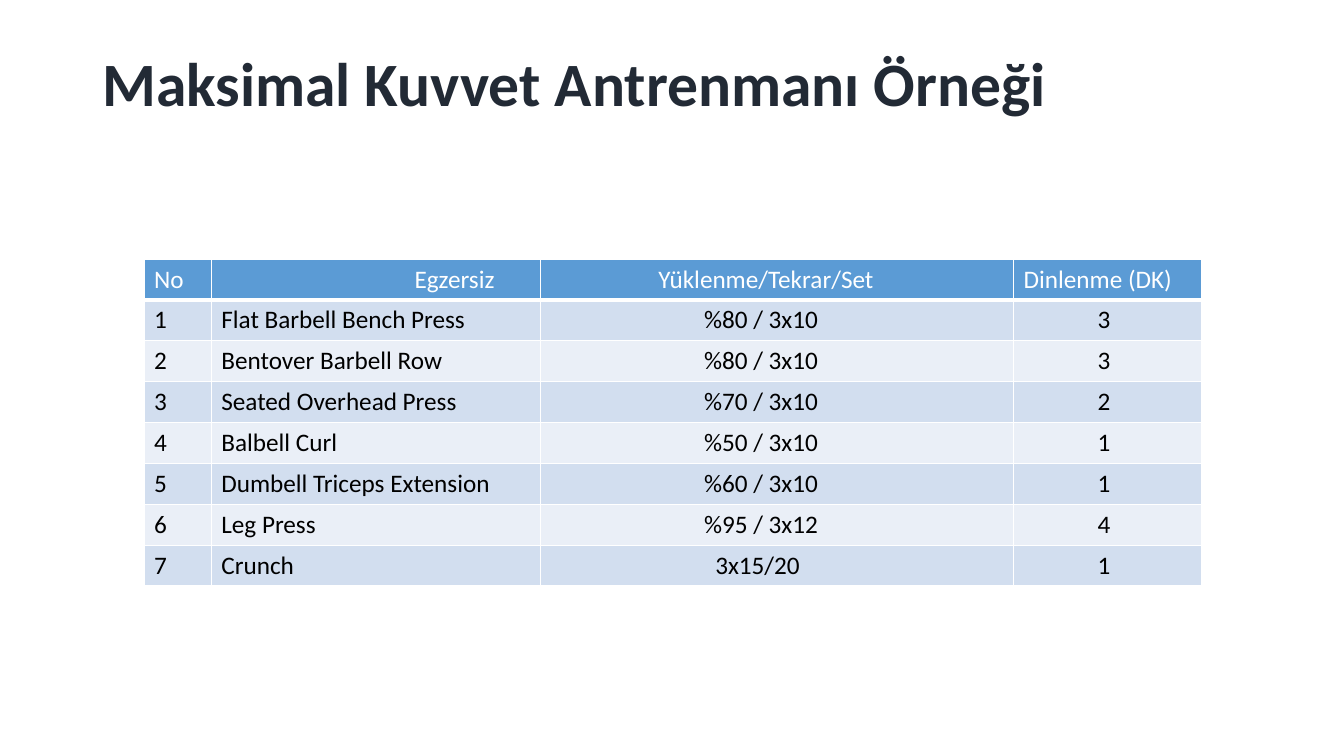
from dataclasses import dataclass

from lxml import etree
from pptx import Presentation, util as u
from pptx.dml import color
from pptx.enum import text
from pptx.oxml import ns


@dataclass(frozen=True)
class Theme:
    """Colours, font and type sizes of the slide."""
    font: str = "Calibri"
    title_size: int = 44
    table_size: int = 18
    title: str = "222A35"
    header: str = "5B9BD5"
    bands: tuple = ("D2DEEF", "EAEFF7")
    white: str = "FFFFFF"
    body: str = "000000"


def apply_format(target, values):
    """Set every attribute named in values on target."""
    for name, value in values.items():
        setattr(target, name, value)


class SlideBuilder:
    """Places styled elements on a grid of 160 columns by 90 rows."""

    def __init__(self, presentation, theme):
        """Add a blank slide and measure its grid."""
        self.theme = theme
        self.slide = presentation.slides.add_slide(presentation.slide_layouts[6])
        self.column = presentation.slide_width / 160
        self.row = presentation.slide_height / 90

    def place(self, left, top, width, height):
        """Turn grid units into slide lengths."""
        return (u.Emu(round(left * self.column)), u.Emu(round(top * self.row)),
                u.Emu(round(width * self.column)), u.Emu(round(height * self.row)))

    def style(self, paragraph, size, rgb, bold=False):
        """Give a paragraph the theme font."""
        apply_format(paragraph.font, {"name": self.theme.font, "size": u.Pt(size), "bold": bold})
        paragraph.font.color.rgb = color.RGBColor.from_string(rgb)

    def title(self, words, *box):
        """Add the vertically centred slide title."""
        frame = self.slide.shapes.add_textbox(*self.place(*box)).text_frame
        apply_format(frame, {"word_wrap": True, "auto_size": text.MSO_AUTO_SIZE.NONE,
                             "vertical_anchor": text.MSO_ANCHOR.MIDDLE})
        paragraph = frame.paragraphs[0]
        apply_format(paragraph, {"text": words, "line_spacing": 0.9})
        self.style(paragraph, self.theme.title_size, self.theme.title, True)

    def borders(self, cell, widths):
        """Draw white cell borders with widths in points."""
        properties = cell._tc.get_or_add_tcPr()
        for side, width in widths.items():
            line = etree.SubElement(properties, ns.qn(f"a:ln{side}"), w=str(u.Pt(width)))
            fill = etree.SubElement(line, ns.qn("a:solidFill"))
            etree.SubElement(fill, ns.qn("a:srgbClr"), val=self.theme.white)

    def cell(self, cell, words, indent, row):
        """Fill one cell according to its row."""
        theme = self.theme
        is_header = row == 0
        self.borders(cell, {"L": 1, "R": 1, "T": 3 if row == 1 else 1, "B": 3 if is_header else 1})
        cell.fill.solid()
        background = theme.header if is_header else theme.bands[(row - 1) % 2]
        cell.fill.fore_color.rgb = color.RGBColor.from_string(background)
        apply_format(cell, {"text": words, "margin_left": u.Inches(0.1) + round(indent * self.column)})
        self.style(cell.text_frame.paragraphs[0], theme.table_size,
                   theme.white if is_header else theme.body)

    def table(self, rows, widths, row_height, indent_for, left, top):
        """Add a banded table with indented cell text."""
        box = self.place(left, top, sum(widths), row_height * len(rows))
        table = self.slide.shapes.add_table(len(rows), len(widths), *box).table
        apply_format(table, {"first_row": False, "horz_banding": False})
        for column, width in zip(table.columns, widths):
            column.width = round(width * self.column)
        for row, values in enumerate(rows):
            table.rows[row].height = round(row_height * self.row)
            for column, words in enumerate(values):
                self.cell(table.cell(row, column), words, indent_for(row, column), row)


EXERCISES = [
    ("Flat Barbell Bench Press", "%80 / 3x10", "3"),
    ("Bentover Barbell Row", "%80 / 3x10", "3"),
    ("Seated Overhead Press", "%70 / 3x10", "2"),
    ("Balbell Curl", "%50 / 3x10", "1"),
    ("Dumbell Triceps Extension", "%60 / 3x10", "1"),
    ("Leg Press", "%95 / 3x12", "4"),
    ("Crunch", "3x15/20", "1"),
]
HEADINGS = ("No", "Egzersiz", "Yüklenme/Tekrar/Set", "Dinlenme (DK)")
HEADING_INDENTS = (0, 23, 12.8, 0)
BODY_INDENTS = (0, 0, 18.24, 8.8)
LAST_ROW_INDENTS = (0, 0, 19.56, 8.8)


def exercise_indent(row, column):
    """Return the text indent of a cell in grid columns."""
    special = {0: HEADING_INDENTS, len(EXERCISES): LAST_ROW_INDENTS}
    return special.get(row, BODY_INDENTS)[column]


def main():
    """Build and save the training slide."""
    presentation = Presentation()
    apply_format(presentation, {"slide_width": u.Inches(13.33), "slide_height": u.Inches(7.5)})
    builder = SlideBuilder(presentation, Theme())
    builder.title("Maksimal Kuvvet Antrenmanı Örneği", 11, 1.6, 138, 17.4)
    rows = [HEADINGS] + [(str(number), *exercise) for number, exercise in enumerate(EXERCISES, 1)]
    builder.table(rows, (8, 39.24, 56.28, 22.32), 4.86, exercise_indent, 17.16, 30.84)
    presentation.save("out.pptx")


if __name__ == "__main__":
    main()
